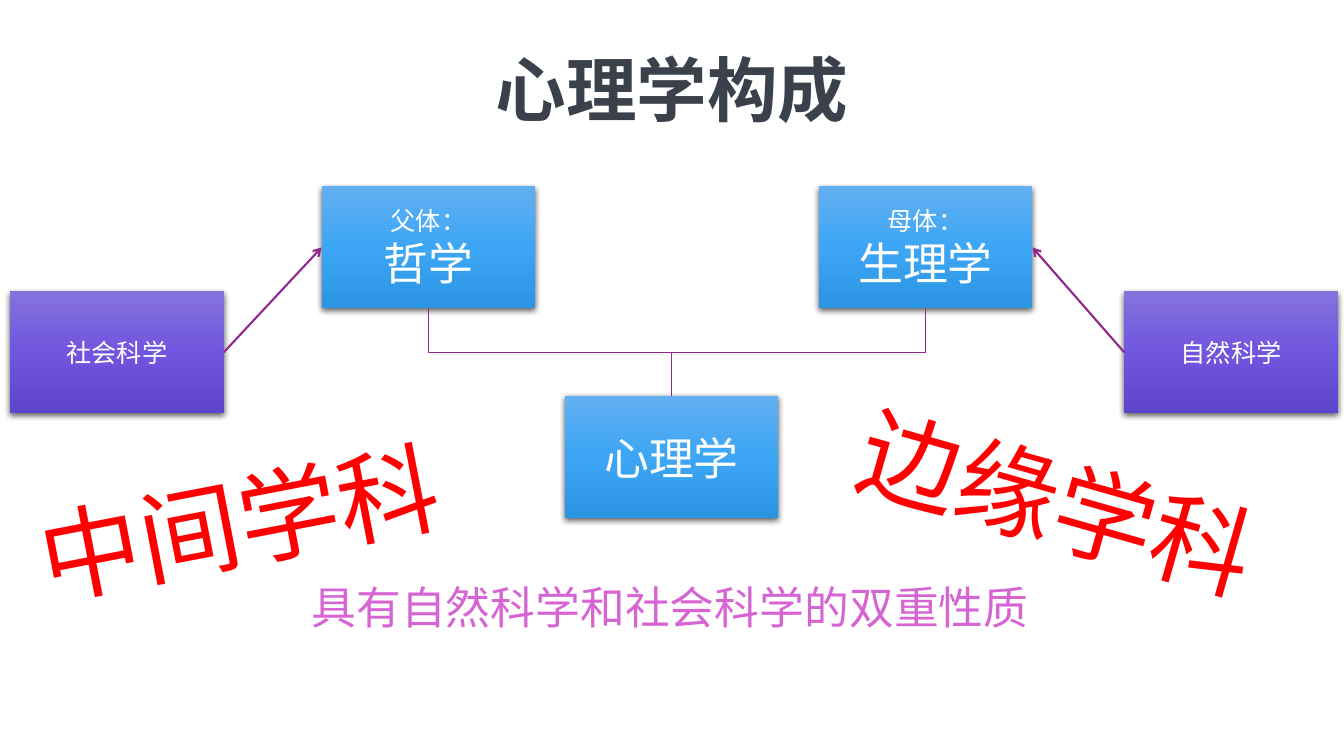
from lxml.etree import SubElement
from pptx import Presentation
from pptx.dml.color import RGBColor
from pptx.enum.shapes import MSO_CONNECTOR, MSO_SHAPE
from pptx.enum.text import MSO_ANCHOR, PP_ALIGN
from pptx.oxml import parse_xml
from pptx.oxml.ns import nsdecls, qn
from pptx.util import Inches, Pt

BLUE = ("62AFF1", "3CA6F5", "2B95E4")
VIOLET = ("8572DD", "7056DE", "5F45CD")
BOTTOM, LEFT, RIGHT, TOP = 2, 1, 3, 0


def rgb(color):
    return RGBColor.from_string(color)


class Diagram:
    """Draws boxes, connectors and text on one slide in a shared style."""

    font = "Arial"
    line = "92278F"
    box_size = (2.12, 1.21)

    def __init__(self, slide):
        self.s = slide

    def style(self, p, text, size, color, bold=False):
        p.text = text
        p.font.name = self.font
        p.font.size = Pt(size)
        p.font.bold = bold
        p.font.color.rgb = rgb(color)

    def box(self, x, y, stops, *lines):
        w, h = self.box_size
        sp = self.s.shapes.add_shape(
            MSO_SHAPE.RECTANGLE, Inches(x), Inches(y), Inches(w), Inches(h))
        sp.line.fill.background()
        sp.shadow.inherit = False
        spPr = sp._element.spPr
        gs = "".join(
            f'<a:gs pos="{i * 50000}"><a:srgbClr val="{c}"/></a:gs>'
            for i, c in enumerate(stops))
        spPr.find(qn("a:prstGeom")).addnext(parse_xml(
            f'<a:gradFill {nsdecls("a")}><a:gsLst>{gs}</a:gsLst>'
            '<a:lin ang="5400000" scaled="0"/></a:gradFill>'))
        spPr.find(qn("a:effectLst")).append(parse_xml(
            f'<a:outerShdw {nsdecls("a")} blurRad="{Pt(4.5)}" dist="{Pt(1.5)}" '
            'dir="5400000" rotWithShape="0"><a:srgbClr val="000000">'
            '<a:alpha val="63000"/></a:srgbClr></a:outerShdw>'))
        tf = sp.text_frame
        tf.word_wrap = True
        tf.vertical_anchor = MSO_ANCHOR.MIDDLE
        for i, (text, size) in enumerate(lines):
            p = tf.add_paragraph() if i else tf.paragraphs[0]
            p.alignment = PP_ALIGN.CENTER
            self.style(p, text, size, "FFFFFF")
        return sp

    def connector(self, kind, start, start_site, end, end_site, width):
        cxn = self.s.shapes.add_connector(kind, 0, 0, 0, 0)
        cxn.begin_connect(start, start_site)
        cxn.end_connect(end, end_site)
        cxn.line.color.rgb = rgb(self.line)
        cxn.line.width = Pt(width)
        SubElement(cxn._element.spPr, qn("a:effectLst"))
        return cxn

    def arrow(self, start, start_site, end, end_site):
        cxn = self.connector(
            MSO_CONNECTOR.STRAIGHT, start, start_site, end, end_site, 1.5)
        ln = cxn.line._get_or_add_ln()
        SubElement(ln, qn("a:tailEnd"), type="arrow")

    def branch(self, parent, child):
        cxn = self.connector(
            MSO_CONNECTOR.ELBOW, parent, BOTTOM, child, TOP, 0.5)
        x1, y1, x2, y2 = cxn.begin_x, cxn.begin_y, cxn.end_x, cxn.end_y
        w, h = y2 - y1, abs(x2 - x1)
        xfrm = cxn._element.spPr.find(qn("a:xfrm"))
        xfrm.attrib.clear()
        xfrm.set("rot", "5400000")
        if x2 > x1:
            xfrm.set("flipV", "1")
        cxn.left, cxn.top = (x1 + x2 - w) // 2, (y1 + y2 - h) // 2
        cxn.width, cxn.height = w, h

    def text(self, x, y, w, h, text, size, color, bold=False, rotation=0):
        sp = self.s.shapes.add_textbox(
            Inches(x), Inches(y), Inches(w), Inches(h))
        sp.rotation = rotation
        sp.text_frame.word_wrap = True
        self.style(sp.text_frame.paragraphs[0], text, size, color, bold)
        return sp

    def title(self, *args):
        tf = self.text(*args, bold=True).text_frame
        tf.vertical_anchor = MSO_ANCHOR.MIDDLE
        p = tf.paragraphs[0]
        p.alignment = PP_ALIGN.CENTER
        p.line_spacing = 0.9

    def slogan(self, x, y, w, text, rotation):
        sp = self.text(x, y, w, 1.31, text, 72, "FF0000", rotation=rotation)
        rPr = sp.text_frame.paragraphs[0].runs[0].font._element
        rPr.insert(0, parse_xml(
            f'<a:ln {nsdecls("a")} w="{Pt(1)}"><a:solidFill>'
            f'<a:srgbClr val="{self.line}"/></a:solidFill></a:ln>'))


def main():
    prs = Presentation()
    prs.slide_width, prs.slide_height = Inches(13.33), Inches(7.5)
    d = Diagram(prs.slides.add_slide(prs.slide_layouts[6]))

    d.title(4.59, 0.15, 4.15, 1.55, "心理学构成", 50.4, "3A414B")
    father = d.box(3.19, 1.85, BLUE, ("父体：", 18), ("哲学", 32))
    mother = d.box(8.12, 1.85, BLUE, ("母体：", 18), ("生理学", 32))
    psychology = d.box(5.6, 3.93, BLUE, ("心理学", 32))
    for parent in (father, mother):
        d.branch(parent, psychology)

    social = d.box(0.1, 2.89, VIOLET, ("社会科学", 18))
    natural = d.box(11.15, 2.89, VIOLET, ("自然科学", 18))
    d.arrow(social, RIGHT, father, LEFT)
    d.arrow(natural, LEFT, mother, RIGHT)

    d.text(2.99, 5.7, 7.97, 0.64, "具有自然科学和社会科学的双重性质", 32, "D665D3")
    d.slogan(0.27, 4.51, 4.23, "中间学科", 349)
    d.slogan(8.39, 4.34, 4.28, "边缘学科", 16)
    prs.save("out.pptx")


if __name__ == "__main__":
    main()
